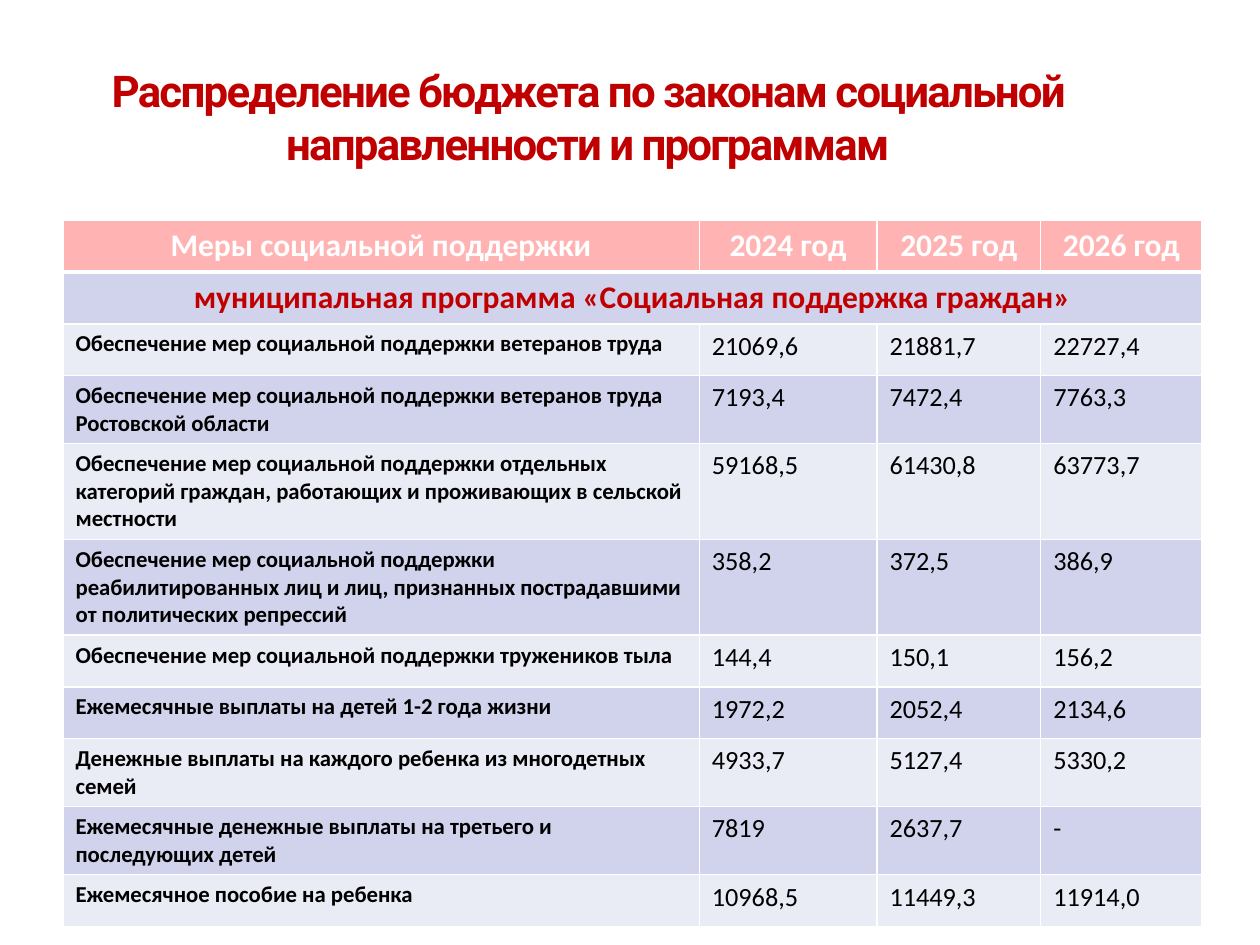
import pptx
import pptx.dml.color
import pptx.enum.text
import pptx.oxml
import pptx.oxml.ns
import pptx.util

RGBColor = pptx.dml.color.RGBColor
Align = pptx.enum.text.PP_ALIGN
Inches = pptx.util.Inches

RED = RGBColor(0xC0, 0x00, 0x00)
WHITE = RGBColor(0xFF, 0xFF, 0xFF)
BLACK = RGBColor(0x00, 0x00, 0x00)
PINK = RGBColor(0xFF, 0xB3, 0xB3)
LAVENDER = RGBColor(0xD0, 0xD3, 0xEB)
PALE = RGBColor(0xE9, 0xEB, 0xF5)

COLUMN_WIDTHS = (5.05, 1.41, 1.3, 1.28)
ROW_HEIGHT = 0.41
TITLE = "Распределение бюджета по законам социальной направленности и программам"
HEADINGS = ("Меры социальной поддержки", "2024 год", "2025 год", "2026 год")
PROGRAMME = "муниципальная программа «Социальная поддержка граждан»"
MEASURES = (
    ("Обеспечение мер социальной поддержки ветеранов труда",
     "21069,6", "21881,7", "22727,4"),
    ("Обеспечение мер социальной поддержки ветеранов труда\nРостовской области",
     "7193,4", "7472,4", "7763,3"),
    ("Обеспечение мер социальной поддержки отдельных категорий граждан, "
     "работающих и проживающих в сельской местности",
     "59168,5", "61430,8", "63773,7"),
    ("Обеспечение мер социальной поддержки реабилитированных лиц и лиц, "
     "признанных пострадавшими от политических репрессий",
     "358,2", "372,5", "386,9"),
    ("Обеспечение мер социальной поддержки тружеников тыла",
     "144,4", "150,1", "156,2"),
    ("Ежемесячные выплаты на детей 1-2 года жизни",
     "1972,2", "2052,4", "2134,6"),
    ("Денежные выплаты на каждого ребенка из многодетных семей",
     "4933,7", "5127,4", "5330,2"),
    ("Ежемесячные денежные выплаты на третьего и последующих детей",
     "7819", "2637,7", "-"),
    ("Ежемесячное пособие на ребенка",
     "10968,5", "11449,3", "11914,0"),
)


def write_text(frame, text, size, color=BLACK, bold=True, font="Calibri",
               align=Align.LEFT, spacing=None):
    """Fill a text frame and format every paragraph in it."""
    frame.text = text
    for paragraph in frame.paragraphs:
        paragraph.alignment = align
        for run in paragraph.runs:
            run.font.size = pptx.util.Pt(size)
            run.font.name = font
            run.font.bold = bold
            run.font.color.rgb = color
            if spacing is not None:
                run.font._element.set("spc", str(spacing * 100))


def paint_cell(cell, fill, bottom=1):
    """Give a cell white borders and a solid fill."""
    properties = cell._tc.get_or_add_tcPr()
    for side, width in (("L", 1), ("R", 1), ("T", 1), ("B", bottom)):
        properties.append(pptx.oxml.parse_xml(
            f'<a:ln{side} {pptx.oxml.ns.nsdecls("a")} w="{pptx.util.Pt(width)}">'
            f'<a:solidFill><a:srgbClr val="{WHITE}"/></a:solidFill></a:ln{side}>'))
    cell.fill.solid()
    cell.fill.fore_color.rgb = fill


def add_title(slide):
    """Place and format the slide title."""
    title = slide.shapes.title
    title.left, title.top = Inches(0.5), Inches(0.3)
    title.width, title.height = Inches(8.33), Inches(1.25)
    title.text_frame.auto_size = pptx.enum.text.MSO_AUTO_SIZE.NONE
    title.text_frame.vertical_anchor = pptx.enum.text.MSO_ANCHOR.MIDDLE
    write_text(title.text_frame, TITLE, size=25, color=RED, font="Roboto",
               align=Align.CENTER, spacing=-1)


def add_budget_table(slide):
    """Add the table of support measures by year."""
    row_count = len(MEASURES) + 2
    budget = slide.shapes.add_table(
        row_count, len(COLUMN_WIDTHS), Inches(0.5), Inches(1.75),
        Inches(sum(COLUMN_WIDTHS)), Inches(ROW_HEIGHT * row_count)).table
    for column, width in zip(budget.columns, COLUMN_WIDTHS):
        column.width = Inches(width)
    for row in budget.rows:
        row.height = Inches(ROW_HEIGHT)

    for column, heading in enumerate(HEADINGS):
        cell = budget.cell(0, column)
        paint_cell(cell, PINK, bottom=3)
        write_text(cell.text_frame, heading, size=18, color=WHITE, align=Align.CENTER)
        paint_cell(budget.cell(1, column), LAVENDER)

    programme = budget.cell(1, 0)
    programme.merge(budget.cell(1, len(HEADINGS) - 1))
    write_text(programme.text_frame, PROGRAMME, size=18, color=RED, align=Align.CENTER)

    for row, measure in enumerate(MEASURES, start=2):
        for column, text in enumerate(measure):
            cell = budget.cell(row, column)
            paint_cell(cell, LAVENDER if row % 2 else PALE)
            write_text(cell.text_frame, text, size=15 if column else 13,
                       bold=column == 0)


def main():
    """Build and save the slide."""
    deck = pptx.Presentation()
    deck.slide_width, deck.slide_height = Inches(10), Inches(7.5)
    slide = deck.slides.add_slide(deck.slide_layouts[5])
    add_title(slide)
    add_budget_table(slide)
    deck.save("out.pptx")


if __name__ == "__main__":
    main()
